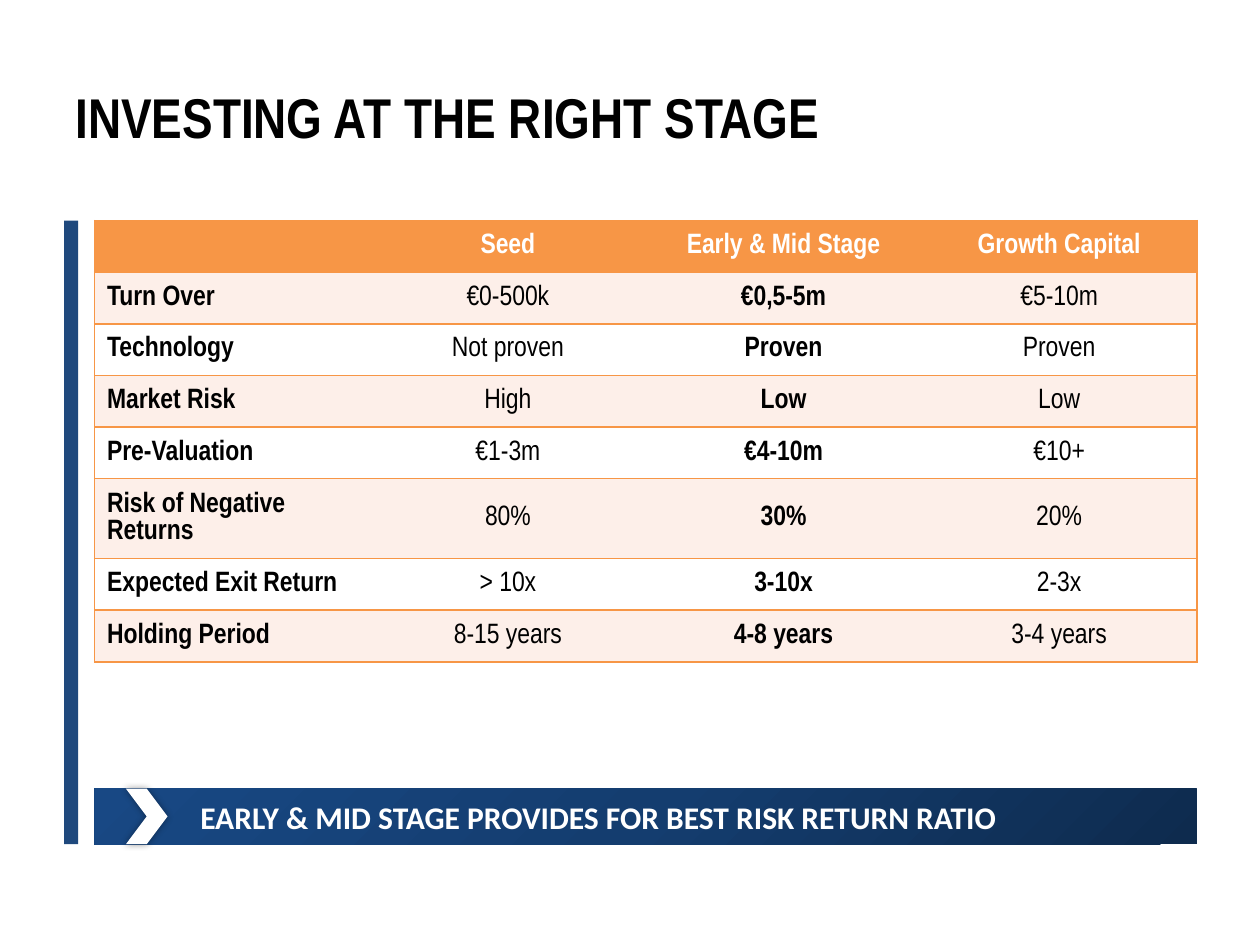
from copy import deepcopy

from lxml.etree import SubElement
from pptx import Presentation
from pptx.dml.color import RGBColor
from pptx.enum.shapes import MSO_SHAPE
from pptx.enum.text import MSO_ANCHOR, PP_ALIGN
from pptx.oxml.ns import qn
from pptx.util import Inches, Pt

COLORS = {
    "black": "000000",
    "white": "FFFFFF",
    "blue": "1F497D",
    "orange": "F79646",
    "band": "FDEFE9",
    "banner dark": "0E2B4E",
    "banner middle": "143D6F",
    "banner light": "184884",
}
NO_TABLE_STYLE = "{2D5ABB26-0587-4C30-8999-92F81FD0307C}"


def write(text_frame, text, size=16, font="Arial Narrow", color="black",
          bold=True, align=PP_ALIGN.LEFT):
    text_frame.word_wrap = True
    paragraph = text_frame.paragraphs[0]
    paragraph.alignment = align
    run = paragraph.add_run()
    run.text = text
    run.font.size = Pt(size)
    run.font.name = font
    run.font.bold = bold
    run.font.color.rgb = RGBColor.from_string(COLORS[color])


def add_plain_shape(kind, left, top, width, height, color):
    shape = slide.shapes.add_shape(
        kind, Inches(left), Inches(top), Inches(width), Inches(height))
    shape.shadow.inherit = False
    shape.line.fill.background()
    shape.fill.solid()
    shape.fill.fore_color.rgb = RGBColor.from_string(COLORS[color])
    return shape


presentation = Presentation()
presentation.slide_width = Inches(10)
presentation.slide_height = Inches(7.5)
slide = presentation.slides.add_slide(presentation.slide_layouts[6])

# Banner with a three-stop gradient, side bar and chevron
banner = add_plain_shape(MSO_SHAPE.RECTANGLE, 0.75, 6.26, 8.75, 0.44, "banner dark")
banner.fill.gradient()
banner.fill.gradient_angle = 135
stop_list = banner._element.spPr.find(".//" + qn("a:gsLst"))
stop_list.insert(1, deepcopy(stop_list[0]))
for stop, position, shade in zip(banner.fill.gradient_stops, (0, 0.5, 1),
                                 ("dark", "middle", "light")):
    stop.position = position
    stop.color.rgb = RGBColor.from_string(COLORS[f"banner {shade}"])

add_plain_shape(MSO_SHAPE.RECTANGLE, 0.51, 1.75, 0.11, 4.95, "blue")

chevron = add_plain_shape(MSO_SHAPE.CHEVRON, 1, 6.26, 0.33, 0.44, "white")
effects = chevron._element.spPr.find(qn("a:effectLst"))
shadow = SubElement(effects, qn("a:outerShdw"), blurRad=str(Pt(4)), dist="0", dir="0")
shadow_color = SubElement(shadow, qn("a:srgbClr"), val=COLORS["black"])
SubElement(shadow_color, qn("a:alpha"), val="40000")

# Banner message and title
message = slide.shapes.add_textbox(Inches(1), Inches(6.26), Inches(8.5), Inches(0.44))
message.text_frame.margin_left = Inches(0.59)
message.text_frame.vertical_anchor = MSO_ANCHOR.MIDDLE
write(message.text_frame, "EARLY & MID STAGE PROVIDES FOR BEST RISK RETURN RATIO",
      size=18, font="Calibri", color="white")

title = slide.shapes.add_textbox(Inches(0.5), Inches(0.3), Inches(6.86), Inches(1.25))
title.text_frame.vertical_anchor = MSO_ANCHOR.MIDDLE
write(title.text_frame, "INVESTING AT THE RIGHT STAGE", size=32)

# Stage comparison table
stages = [
    ("", "Seed", "Early & Mid Stage", "Growth Capital"),
    ("Turn Over", "€0-500k", "€0,5-5m", "€5-10m"),
    ("Technology", "Not proven", "Proven", "Proven"),
    ("Market Risk", "High", "Low", "Low"),
    ("Pre-Valuation", "€1-3m", "€4-10m", "€10+"),
    ("Risk of Negative Returns", "80%", "30%", "20%"),
    ("Expected Exit Return", "> 10x", "3-10x", "2-3x"),
    ("Holding Period", "8-15 years", "4-8 years", "3-4 years"),
]
row_height = Inches(0.41)
frame = slide.shapes.add_table(len(stages), 4, Inches(0.75), Inches(1.75),
                               Inches(8.75), row_height * len(stages))
table = frame.table
table._tbl.tblPr.find(qn("a:tableStyleId")).text = NO_TABLE_STYLE

for row, values in enumerate(stages):
    table.rows[row].height = row_height
    for column, value in enumerate(values):
        cell = table.cell(row, column)
        cell.vertical_anchor = MSO_ANCHOR.MIDDLE
        sides = {0: "LTB", 3: "RTB"}.get(column, "TB")
        for side in sides:
            border = SubElement(cell._tc.get_or_add_tcPr(), qn(f"a:ln{side}"), w=str(Pt(1)))
            border_fill = SubElement(border, qn("a:solidFill"))
            SubElement(border_fill, qn("a:srgbClr"), val=COLORS["orange"])
        header = row == 0
        fill = "orange" if header else "band" if row % 2 else "white"
        cell.fill.solid()
        cell.fill.fore_color.rgb = RGBColor.from_string(COLORS[fill])
        write(cell.text_frame, value,
              color="white" if header else "black",
              bold=header or column in (0, 2),
              align=PP_ALIGN.CENTER if column else PP_ALIGN.LEFT)

presentation.save("out.pptx")
